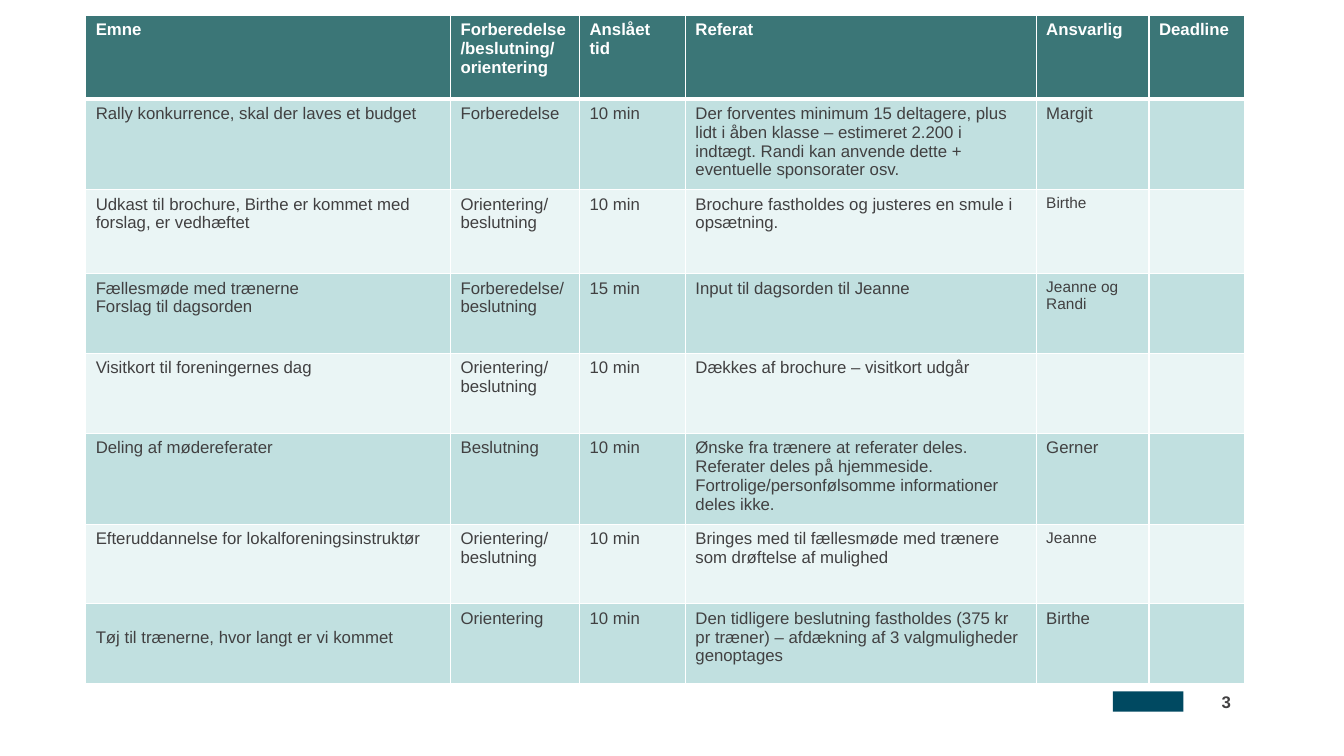
from dataclasses import dataclass

from lxml import etree
from pptx import Presentation
from pptx.dml.color import RGBColor
from pptx.enum.shapes import MSO_SHAPE
from pptx.enum.text import PP_ALIGN
from pptx.oxml.ns import qn
from pptx.util import Pt

RECT = MSO_SHAPE.RECTANGLE
RIGHT = PP_ALIGN.RIGHT


@dataclass(frozen=True)
class Theme:
    """Colours, font and type sizes of the slide."""
    font: str = "Arial"
    text: str = "414041"
    white: str = "FFFFFF"
    header: str = "3B7677"
    bands: tuple = ("C1E0E0", "EAF5F5")
    accent: str = "004961"
    body: float = 12
    small: float = 11


THEME = Theme()
COL_WIDTHS = (260.6, 92.2, 75.6, 250.6, 80.6, 68.4)
HEADER_HEIGHT, ROW_HEIGHT = 60, 57
TALL_ROWS = {2: 60}
OWNER_COL = 4
SMALL_OWNER_ROWS = (2, 3, 6)
LOWERED_CELL = (7, 0)
LOWERED_MARGIN = 17.4

AGENDA = (
    ("Emne", "Forberedelse/beslutning/ orientering", "Anslået tid", "Referat",
     "Ansvarlig", "Deadline"),
    ("Rally konkurrence, skal der laves et budget", "Forberedelse", "10 min",
     "Der forventes minimum 15 deltagere, plus lidt i åben klasse – estimeret 2.200 i "
     "indtægt. Randi kan anvende dette + eventuelle sponsorater osv.", "Margit", ""),
    ("Udkast til brochure, Birthe er kommet med forslag, er vedhæftet",
     "Orientering/beslutning", "10 min",
     "Brochure fastholdes og justeres en smule i opsætning.", "Birthe", ""),
    ("Fællesmøde med trænerne\nForslag til dagsorden", "Forberedelse/beslutning",
     "15 min", "Input til dagsorden til Jeanne", "Jeanne og Randi", ""),
    ("Visitkort til foreningernes dag", "Orientering/beslutning", "10 min",
     "Dækkes af brochure – visitkort udgår", "", ""),
    ("Deling af mødereferater", "Beslutning", "10 min",
     "Ønske fra trænere at referater deles. Referater deles på hjemmeside. "
     "Fortrolige/personfølsomme informationer deles ikke.", "Gerner", ""),
    ("Efteruddannelse for lokalforeningsinstruktør", "Orientering/beslutning", "10 min",
     "Bringes med til fællesmøde med trænere som drøftelse af mulighed", "Jeanne", ""),
    ("Tøj til trænerne, hvor langt er vi kommet", "Orientering", "10 min",
     "Den tidligere beslutning fastholdes (375 kr pr træner) – afdækning af 3 "
     "valgmuligheder genoptages", "Birthe", ""),
)


def write(tf, text, size, color, bold):
    """Fill a text frame and format each of its paragraphs."""
    tf.text = text
    fmt = {"name": THEME.font, "size": Pt(size), "bold": bold}
    for p in tf.paragraphs:
        for key, value in fmt.items():
            setattr(p.font, key, value)
        p.font.color.rgb = RGBColor.from_string(color)


def set_borders(cell, widths):
    """Draw white cell borders with the given width per side."""
    tc_pr = cell._tc.get_or_add_tcPr()
    for side, width in widths.items():
        ln = etree.SubElement(tc_pr, qn(f"a:ln{side}"), w=str(Pt(width)))
        fill = etree.SubElement(ln, qn("a:solidFill"))
        etree.SubElement(fill, qn("a:srgbClr"), val=THEME.white)


def add_agenda(s, left, top):
    """Place the agenda table with its top left corner at the given point."""
    heights = [HEADER_HEIGHT] + [TALL_ROWS.get(i, ROW_HEIGHT) for i in range(1, len(AGENDA))]
    table = s.shapes.add_table(len(AGENDA), len(COL_WIDTHS), Pt(left), Pt(top),
                               Pt(sum(COL_WIDTHS)), Pt(sum(heights))).table
    for col, width in zip(table.columns, COL_WIDTHS):
        col.width = Pt(width)
    for i, (values, height) in enumerate(zip(AGENDA, heights)):
        table.rows[i].height = Pt(height)
        head = i == 0
        fill = THEME.header if head else THEME.bands[(i - 1) % 2]
        color = THEME.white if head else THEME.text
        borders = {"L": 1, "R": 1, "T": 3 if i == 1 else 1, "B": 3 if head else 1}
        for j, value in enumerate(values):
            cell = table.cell(i, j)
            set_borders(cell, borders)
            cell.fill.solid()
            cell.fill.fore_color.rgb = RGBColor.from_string(fill)
            small = j == OWNER_COL and i in SMALL_OWNER_ROWS
            write(cell.text_frame, value, THEME.small if small else THEME.body, color, head)
    table.cell(*LOWERED_CELL).margin_top = Pt(LOWERED_MARGIN)


def add_footer(s, left, top, number):
    """Place the accent bar and the page number to its right."""
    bar = s.shapes.add_shape(RECT, Pt(left), Pt(top + 3.6), Pt(50.4), Pt(14.4))
    bar.shadow.inherit = False
    bar.fill.solid()
    bar.fill.fore_color.rgb = RGBColor.from_string(THEME.accent)
    bar.line.fill.background()
    tf = s.shapes.add_textbox(Pt(left + 48.2), Pt(top), Pt(43.2), Pt(18)).text_frame
    tf.word_wrap = True
    write(tf, number, THEME.body, THEME.text, True)
    tf.paragraphs[0].alignment = RIGHT


def main():
    """Build the agenda slide and save it."""
    prs = Presentation()
    prs.slide_width, prs.slide_height = Pt(960), Pt(540)
    s = prs.slides.add_slide(prs.slide_layouts[6])
    add_footer(s, 794.9, 490.3, "3")
    add_agenda(s, 61.2, 10.8)
    prs.save("out.pptx")


if __name__ == "__main__":
    main()
